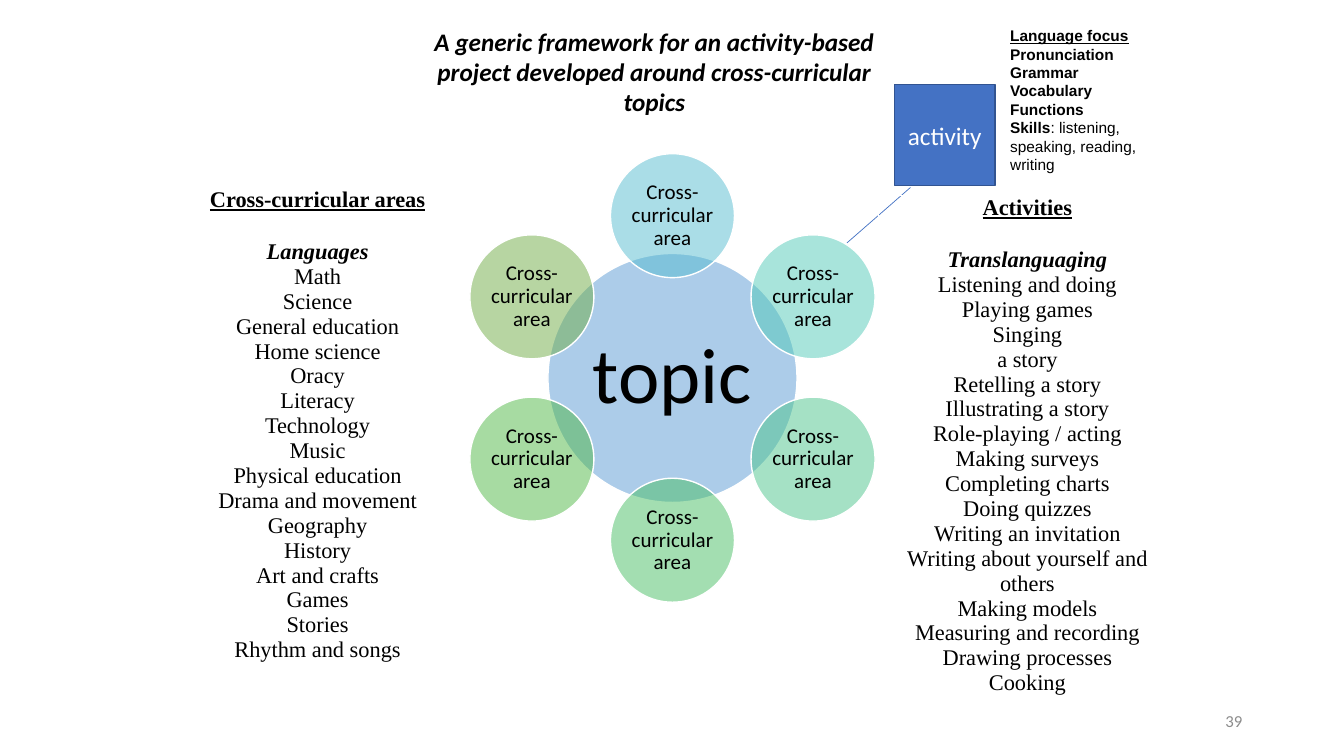
from math import cos, radians, sin

from lxml import etree
from pptx import Presentation
from pptx.dml.color import RGBColor
from pptx.enum.shapes import MSO_CONNECTOR, MSO_SHAPE
from pptx.enum.text import MSO_ANCHOR, PP_ALIGN
from pptx.oxml.ns import qn
from pptx.util import Inches, Pt

BLACK = RGBColor(0x00, 0x00, 0x00)
WHITE = RGBColor(0xFF, 0xFF, 0xFF)
GRAY = RGBColor(0x8C, 0x8C, 0x8C)
BLUE = RGBColor(0x44, 0x72, 0xC4)
DARK_BLUE = RGBColor(0x32, 0x54, 0x91)
TOPIC_BLUE = RGBColor(0x5B, 0x9B, 0xD5)
AREA_COLORS = [
    RGBColor(0x56, 0xBC, 0xD0),
    RGBColor(0x52, 0xCA, 0xB8),
    RGBColor(0x4D, 0xC5, 0x8D),
    RGBColor(0x49, 0xBF, 0x64),
    RGBColor(0x50, 0xB8, 0x46),
    RGBColor(0x70, 0xAD, 0x47),
]

TITLE = "A generic framework for an activity-based project developed around cross-curricular topics"
LANGUAGE_FOCUS = ["Language focus", "Pronunciation", "Grammar", "Vocabulary", "Functions"]
SKILLS = ("Skills", ": listening, speaking, reading, writing")
LISTS = [
    (1.67, 1.86, "Cross-curricular areas", [
        "Languages", "Math", "Science", "General education", "Home science",
        "Oracy", "Literacy", "Technology", "Music", "Physical education",
        "Drama and movement", "Geography", "History", "Art and crafts",
        "Games", "Stories", "Rhythm and songs",
    ]),
    (8.71, 1.94, "Activities", [
        "Translanguaging", "Listening and doing", "Playing games", "Singing",
        "a story", "Retelling a story", "Illustrating a story",
        "Role-playing / acting", "Making surveys", "Completing charts",
        "Doing quizzes", "Writing an invitation",
        "Writing about yourself and others", "Making models",
        "Measuring and recording", "Drawing processes", "Cooking",
    ]),
]

CENTER_X, CENTER_Y = 6.67, 3.75
RING_RADIUS = 1.61
TOPIC_SIZE, AREA_SIZE = 2.47, 1.23
LIST_WIDTH, HEADER_HEIGHT, LINE_HEIGHT = 2.96, 0.26, 0.25


def style(run, size, name="Calibri", color=BLACK, bold=False, italic=False, underline=False):
    font = run.font
    font.size, font.name = Pt(size), name
    font.color.rgb = color
    font.bold, font.italic, font.underline = bold, italic, underline


def write(frame, text, size, align=PP_ALIGN.CENTER, **look):
    frame.word_wrap = True
    frame.text = text
    for paragraph in frame.paragraphs:
        paragraph.alignment = align
        for run in paragraph.runs:
            style(run, size, **look)


def add_text(slide, box, text, size, **look):
    shape = slide.shapes.add_textbox(*map(Inches, box))
    write(shape.text_frame, text, size, **look)
    return shape.text_frame


def add_filled(slide, kind, box, fill, line, text, size, color):
    shape = slide.shapes.add_shape(kind, *map(Inches, box))
    shape.shadow.inherit = False
    shape.fill.solid()
    shape.fill.fore_color.rgb = fill
    shape.line.color.rgb = line
    shape.line.width = Pt(1)
    shape.text_frame.vertical_anchor = MSO_ANCHOR.MIDDLE
    write(shape.text_frame, text, size, color=color)
    return shape


def add_circle(slide, x, y, diameter, fill, text, size):
    box = (x - diameter / 2, y - diameter / 2, diameter, diameter)
    circle = add_filled(slide, MSO_SHAPE.OVAL, box, fill, WHITE, text, size, BLACK)
    color = circle.fill._xPr.find(qn("a:solidFill"))[0]
    etree.SubElement(color, qn("a:alpha")).set("val", "50000")
    frame = circle.text_frame
    frame.margin_left = frame.margin_right = Inches(0.02)
    frame.margin_top = frame.margin_bottom = Inches(0.02)
    frame.paragraphs[0].line_spacing = 0.9


def add_list(slide, left, top, heading, items):
    heights = (HEADER_HEIGHT, LINE_HEIGHT * (len(items) + 1))
    box = (left, top, LIST_WIDTH, sum(heights))
    table = slide.shapes.add_table(2, 1, *map(Inches, box)).table
    table.first_row = table.horz_banding = False
    for row, height, text in zip(table.rows, heights, (heading, "\n".join(items))):
        row.height = Inches(height)
        cell = row.cells[0]
        cell.fill.background()
        cell.margin_left = cell.margin_right = Inches(0.07)
        cell.margin_top = cell.margin_bottom = 0
        write(cell.text_frame, text, 16, name="Times New Roman")
    heading_font = table.cell(0, 0).text_frame.paragraphs[0].runs[0].font
    heading_font.bold = heading_font.underline = True
    body = table.cell(1, 0)
    body.margin_top = Inches(LINE_HEIGHT)
    first_font = body.text_frame.paragraphs[0].runs[0].font
    first_font.bold = first_font.italic = True


def main():
    presentation = Presentation()
    presentation.slide_width, presentation.slide_height = Inches(13.33), Inches(7.5)
    slide = presentation.slides.add_slide(presentation.slide_layouts[6])

    number = add_text(slide, (9.42, 6.95, 3, 0.4), "39", 12, align=PP_ALIGN.RIGHT, color=GRAY)
    number.vertical_anchor = MSO_ANCHOR.MIDDLE

    add_circle(slide, CENTER_X, CENTER_Y, TOPIC_SIZE, TOPIC_BLUE, "topic", 56)
    for index, color in enumerate(AREA_COLORS):
        angle = radians(index * 360 / len(AREA_COLORS))
        x = CENTER_X + RING_RADIUS * sin(angle)
        y = CENTER_Y - RING_RADIUS * cos(angle)
        add_circle(slide, x, y, AREA_SIZE, color, "Cross-curricular area", 15)

    link = slide.shapes.add_connector(
        MSO_CONNECTOR.STRAIGHT, Inches(8.4), Inches(2.41), Inches(9.03), Inches(1.86))
    link.line.color.rgb = BLUE
    link.line.width = Pt(0.5)
    etree.SubElement(link._element.spPr, qn("a:effectLst"))
    add_filled(slide, MSO_SHAPE.RECTANGLE, (8.87, 0.84, 1, 1), BLUE, DARK_BLUE,
               "activity", 18, WHITE)

    add_text(slide, (3.99, 0.21, 5, 1.01), TITLE, 18, bold=True, italic=True)
    focus = add_text(slide, (9.92, 0.21, 1.75, 1.25), "\n".join(LANGUAGE_FOCUS), 11,
                     align=PP_ALIGN.LEFT, name="Arial", bold=True)
    focus.paragraphs[0].runs[0].font.underline = True
    skills = focus.add_paragraph()
    for text, bold in zip(SKILLS, (True, False)):
        run = skills.add_run()
        run.text = text
        style(run, 11, name="Arial", bold=bold)

    for entry in LISTS:
        add_list(slide, *entry)

    presentation.save("out.pptx")


if __name__ == "__main__":
    main()
